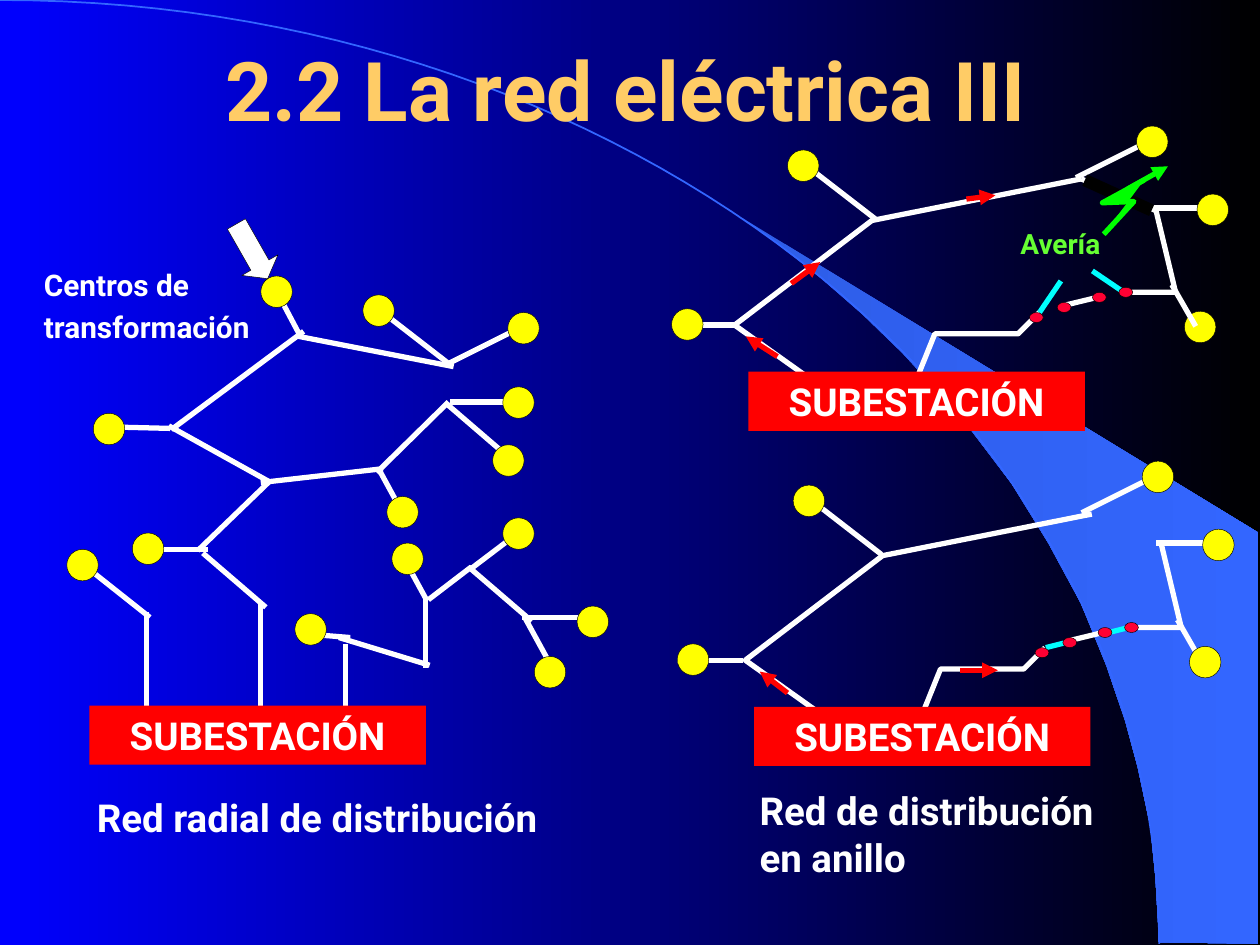
from lxml import etree
from pptx import Presentation
from pptx.dml.color import RGBColor
from pptx.enum.shapes import MSO_CONNECTOR, MSO_SHAPE
from pptx.enum.text import MSO_ANCHOR, PP_ALIGN
from pptx.oxml.ns import qn
from pptx.util import Inches, Pt

STRAIGHT = MSO_CONNECTOR.STRAIGHT
OVAL = MSO_SHAPE.OVAL
RECTANGLE = MSO_SHAPE.RECTANGLE
RIGHT_ARROW = MSO_SHAPE.RIGHT_ARROW
MIDDLE = MSO_ANCHOR.MIDDLE
TOP = MSO_ANCHOR.TOP
CENTER = PP_ALIGN.CENTER
LEFT = PP_ALIGN.LEFT

COLUMNS, ROWS = 100, 75
WHITE, BLACK, RED = "FFFFFF", "000000", "FF0000"
YELLOW, CYAN, GREEN, CRIMSON = "FFFF00", "00FFFF", "00FF00", "FF0033"
BLUE = "3366FF"


def color(hex_string):
    return RGBColor.from_string(hex_string)


def shift(points, across, down):
    return [(x + across, y + down) for x, y in points]


class NetworkSlide:
    font = "Roboto"
    wire_width = 3
    node_size = 2.5

    def __init__(self, deck):
        self.slide = deck.slides.add_slide(deck.slide_layouts[6])
        self.shapes = self.slide.shapes
        self.column = deck.slide_width / COLUMNS
        self.row = deck.slide_height / ROWS

    def place(self, x, y):
        return round(x * self.column), round(y * self.row)

    def gradient(self, fill, start, end):
        fill.gradient()
        fill.gradient_angle = 0
        for stop, shade, position in zip(fill.gradient_stops, (start, end), (0, 1)):
            stop.color.rgb = color(shade)
            stop.position = position

    def stroke(self, line, shade, width):
        line.color.rgb = color(shade)
        line.width = Pt(width)

    def wire(self, start, end, shade=WHITE, width=wire_width, arrow=False):
        connector = self.shapes.add_connector(
            STRAIGHT, *self.place(*start), *self.place(*end))
        self.stroke(connector.line, shade, width)
        properties = connector._element.spPr
        if arrow:
            tip = etree.SubElement(properties.get_or_add_ln(), qn("a:tailEnd"))
            tip.set("type", "triangle")
        etree.SubElement(properties, qn("a:effectLst"))

    def outline(self, points, shade=WHITE, width=wire_width, fill=None, closed=False):
        corners = [self.place(*point) for point in points]
        builder = self.shapes.build_freeform(*corners[0])
        builder.add_line_segments(corners[1:], close=closed)
        shape = builder.convert_to_shape()
        shape.shadow.inherit = False
        if isinstance(fill, tuple):
            self.gradient(shape.fill, *fill)
        elif fill:
            shape.fill.solid()
            shape.fill.fore_color.rgb = color(fill)
        else:
            shape.fill.background()
        if shade:
            self.stroke(shape.line, shade, width)
        else:
            shape.line.fill.background()

    def block(self, kind, left, top, width, height, fill, outlined=True):
        shape = self.shapes.add_shape(
            kind, *self.place(left, top), *self.place(width, height))
        shape.shadow.inherit = False
        shape.fill.solid()
        shape.fill.fore_color.rgb = color(fill)
        if outlined:
            self.stroke(shape.line, BLACK, 0.25)
        else:
            shape.line.fill.background()
        return shape

    def node(self, left, top):
        self.block(OVAL, left, top, self.node_size, self.node_size, YELLOW)

    def switch(self, left, top):
        self.block(OVAL, left, top, 1.1, 0.8, CRIMSON)

    def substation(self, left, top):
        box = self.block(RECTANGLE, left, top, 26.7, 4.7, RED, outlined=False)
        self.set_text(box.text_frame, "SUBESTACIÓN", 22, align=CENTER, anchor=MIDDLE)

    def label(self, left, top, width, height, text, size, wrap=True, **style):
        box = self.shapes.add_textbox(
            *self.place(left, top), *self.place(width, height))
        box.text_frame.word_wrap = wrap
        self.set_text(box.text_frame, text, size, **style)

    def set_text(self, frame, text, size, shade=WHITE, align=LEFT, anchor=TOP,
                 spacing=0, shadow=False):
        frame.text = text
        frame.vertical_anchor = anchor
        for para in frame.paragraphs:
            para.alignment = align
            para.space_before = Pt(spacing)
            for span in para.runs:
                span.font.size = Pt(size)
                span.font.bold = True
                span.font.color.rgb = color(shade)
                if shadow:
                    self.text_shadow(span)
                span.font.name = self.font

    def text_shadow(self, span):
        effects = etree.SubElement(span.font._element, qn("a:effectLst"))
        cast = etree.SubElement(effects, qn("a:outerShdw"), dist="35921", dir="2700000")
        etree.SubElement(cast, qn("a:srgbClr"), val=BLACK)

    def ring(self, across, down, trunk_across, links):
        def moved(*points):
            return shift(points, across, down)

        self.outline(moved((72.5, 30.7), (74.2, 26.5), (80.8, 26.5), (82.5, 24.8)))
        self.outline(shift([(64.2, 30), (58.3, 25.8), (69.2, 17.5), (85.8, 14.2)],
                           trunk_across, down))
        self.outline(moved((91.7, 16.5), (93.3, 23.2), (89.2, 23.2)))
        for start, end in links:
            self.wire(start, end, CYAN)
        for start, end in [
            ((69.5, 17.4), (64.2, 13.3)), ((53.3, 25.8), (58.5, 25.8)),
            ((85.4, 14.1), (91.2, 11.2)), ((94.9, 25.9), (93, 22.6)),
            ((91.3, 16.5), (95.8, 16.5)), ((84.2, 24.3), (87.5, 23.5)),
        ]:
            self.wire(*moved(start, end))
        for spot in moved((62.5, 11.9), (53.3, 24.5), (90.2, 10), (95, 15.4)):
            self.node(*spot)
        for spot in moved((88.8, 22.8), (86.7, 23.2), (83.9, 24), (81.7, 24.8)):
            self.switch(*spot)
        self.substation(*moved((59.4, 29.5))[0])


def arc_point(t):
    s = 1 - t
    return (3 * s * s * t * 50.8 + 3 * s * t * t * 92 + t ** 3 * 92,
            3 * s * t * t * 33.5 + t ** 3 * 74.9)


def draw_backdrop(page):
    page.gradient(page.slide.background.fill, "0000FF", BLACK)
    page.outline(
        [(92, 74.8), (99.9, 74.9), (99.9, 42.3), (58.9, 17.3), (62.4, 19.9),
         (65.3, 22.2), (68.5, 25), (71.6, 28), (76.2, 33), (80.3, 38.4),
         (83.2, 43.1), (85.8, 47.9), (87.8, 52.8), (89.3, 57.2), (90.3, 60.9),
         (91.3, 65.6), (91.7, 69.6)],
        shade=None, fill=("2E5DE7", BLUE), closed=True)
    page.outline([arc_point(step / 60) for step in range(61)], BLUE, 1)
    page.label(7.5, 0.8, 84.4, 12.5, "2.2 La red eléctrica III", 47,
               shade="FFCC66", align=CENTER, anchor=MIDDLE, shadow=True)


def draw_radial_network(page):
    for start, end in [
        ((11.6, 59.4), (11.6, 48.6)), ((27.4, 59.4), (27.4, 51.1)),
        ((20.7, 58.6), (20.7, 47.8)), ((21.1, 48.2), (16.1, 43.9)),
        ((15.7, 43.7), (21.4, 38.2)), ((21.5, 38.3), (13.4, 33.8)),
        ((13.6, 34.1), (24.1, 26.3)), ((23.7, 26.7), (36, 29.1)),
        ((35.8, 29), (30.5, 24.9)), ((20.7, 38.3), (30.4, 37.2)),
        ((29.9, 37.5), (35.6, 31.9)), ((31.9, 40.6), (30.1, 37.3)),
        ((40.5, 36.4), (35.5, 32.1)), ((35.7, 31.9), (41.6, 31.9)),
        ((34.1, 52.8), (26.9, 50.6)), ((33.8, 53), (33.8, 47.4)),
        ((11.9, 49), (6.6, 44.8)), ((34, 47.6), (37.4, 45)),
        ((42.2, 49.3), (37.2, 45)), ((41.4, 49), (46.6, 49)),
        ((33.9, 47.7), (32.1, 44.4)), ((27.8, 50.6), (24.1, 50.3)),
        ((40.6, 42.7), (37.3, 45.2)), ((43.5, 52.4), (41.7, 49.1)),
        ((11.3, 43.6), (16.5, 43.6)), ((9.3, 33.9), (13.5, 34)),
        ((23.9, 26.8), (22.1, 23.4)), ((35.5, 28.9), (41.3, 26)),
    ]:
        page.wire(start, end)
    page.substation(7.1, 56)
    for spot in [
        (45.8, 48.1), (42.4, 52.1), (39.9, 41.1), (31.1, 43.1), (23.4, 48.7),
        (10.5, 42.3), (5.3, 43.6), (39.9, 30.7), (39.1, 35.3), (30.7, 39.4),
        (7.4, 32.8), (40.3, 24.8), (28.8, 23.4), (20.7, 21.9),
    ]:
        page.node(*spot)
    page.label(2.5, 20.7, 21.7, 7.2, "Centros de\ntransformación", 17, spacing=3.4)
    pointer = page.block(RIGHT_ARROW, 17.5, 18.3, 5, 3.3, WHITE)
    pointer.rotation = 60.3
    pointer.adjustments[1] = 0.375
    page.label(6.7, 62.5, 40, 8.3, "Red radial de distribución", 22, shadow=True)


def draw_ring_networks(page):
    page.label(59.3, 62, 32.5, 8.3, "Red de distribución\nen anillo", 22, shadow=True)
    page.node(94, 24.7)
    page.ring(0, 0, 0, [((89.2, 23.2), (86.7, 21.5)), ((82.5, 24.8), (84.2, 22.3))])
    page.ring(0.45, 26.6, 0.85, [((89.6, 49.8), (88, 50.2)), ((83, 51.4), (84.6, 51))])
    page.node(94.4, 51.3)
    for start, end in [
        ((61.7, 28.3), (59.2, 26.7)), ((62.8, 22.5), (65.1, 20.8)),
        ((76.7, 15.8), (79, 15.5)), ((76.2, 53.2), (79.2, 53.2)),
        ((62.5, 55), (60.3, 53.3)),
    ]:
        page.wire(start, end, RED, arrow=True)


def draw_fault(page):
    page.wire((85.8, 14.2), (91.7, 16.7))
    page.wire((86.1, 14.3), (91.4, 16.7), BLACK, 7)
    page.outline([(87.6, 18.6), (90, 16), (87.5, 16.1), (90.8, 14.3)],
                 GREEN, fill=GREEN)
    page.wire((89.5, 15), (92.7, 13.2), GREEN, arrow=True)
    page.label(80, 17.5, 9.1, 3.7, "Avería", 16, wrap=False, shade="66FF33", spacing=3.2)


def main():
    deck = Presentation()
    deck.slide_width, deck.slide_height = Inches(10), Inches(7.5)
    page = NetworkSlide(deck)
    draw_backdrop(page)
    draw_radial_network(page)
    draw_ring_networks(page)
    draw_fault(page)
    deck.save("out.pptx")


if __name__ == "__main__":
    main()
